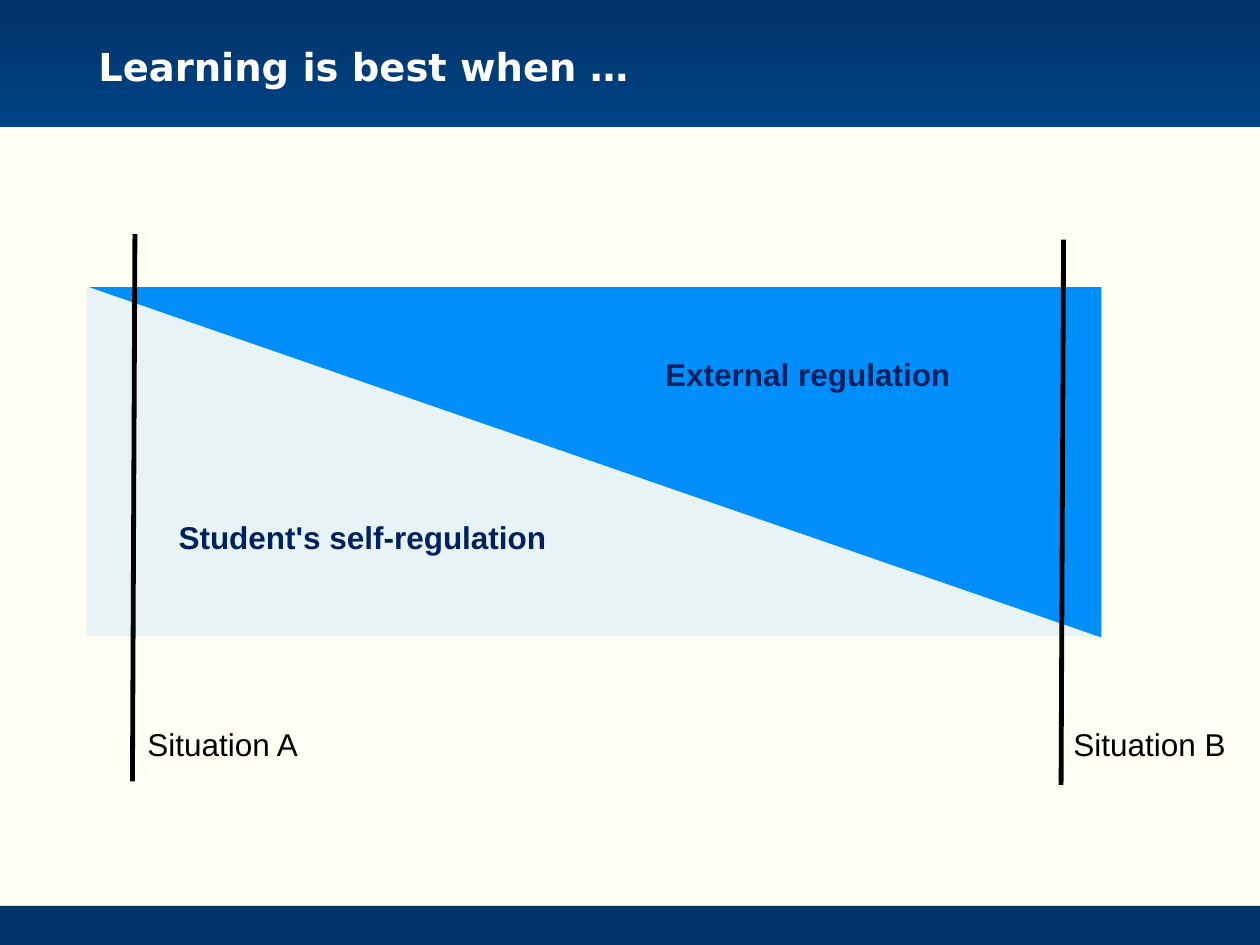
"""Build the slide on self-regulation and external regulation in learning."""
from dataclasses import dataclass

from lxml import etree
from pptx import Presentation
from pptx import util as u
from pptx.dml.color import RGBColor
from pptx.enum import shapes, text
from pptx.oxml import ns

NAVY, INK, WHITE, BLACK = "003366", "002060", "FFFFFF", "000000"


@dataclass
class Box:
    """A frame in centimetres."""
    left: float
    top: float
    width: float
    height: float

    def emu(self) -> tuple:
        """Return the frame as lengths."""
        return tuple(u.Cm(v) for v in (self.left, self.top, self.width, self.height))


@dataclass
class Block:
    """A filled shape without outline."""
    kind: shapes.MSO_SHAPE
    box: Box
    colors: tuple
    rotation: float = 0


@dataclass
class Label:
    """A short text on the diagram."""
    words: str
    box: Box
    color: str = BLACK
    bold: bool = False


@dataclass
class Marker:
    """A slightly slanted line that marks a situation."""
    x1: float
    y1: float
    x2: float
    y2: float


BLOCKS = [
    Block(shapes.MSO_SHAPE.RECTANGLE, Box(0, 18.26, 25.4, 0.79), (NAVY,)),
    Block(shapes.MSO_SHAPE.RECTANGLE, Box(0, 0, 25.4, 2.57), (NAVY, "004385")),
    Block(shapes.MSO_SHAPE.RIGHT_TRIANGLE, Box(1.75, 5.77, 20.4, 7.06), ("E7F3F4",)),
    Block(shapes.MSO_SHAPE.RIGHT_TRIANGLE, Box(1.8, 5.79, 20.4, 7.06), ("008FFA",), 180),
]
LABELS = [
    Label("Student's self-regulation", Box(3.35, 10.31, 8.61, 1.02), INK, True),
    Label("External regulation", Box(13.16, 7.04, 7.9, 1.02), INK, True),
    Label("Situation A", Box(2.72, 14.5, 5, 1.02)),
    Label("Situation B", Box(21.39, 14.5, 5, 1.02)),
]
MARKERS = [Marker(2.72, 4.72, 2.67, 15.75), Marker(21.44, 4.83, 21.39, 15.82)]


def rgb(value: str) -> RGBColor:
    """Turn a hex string into a colour."""
    return RGBColor.from_string(value)


def write(tf, words: str, *, size: float = 18, font: str = "Arial", color: str = BLACK,
          bold: bool = False, anchor=text.MSO_ANCHOR.TOP) -> None:
    """Write one left-aligned paragraph into a text frame."""
    tf.word_wrap = True
    tf.auto_size = text.MSO_AUTO_SIZE.NONE
    tf.vertical_anchor = anchor
    p = tf.paragraphs[0]
    p.alignment = text.PP_ALIGN.LEFT
    r = p.add_run()
    r.text = words
    r.font.size, r.font.name, r.font.bold = u.Pt(size), font, bold
    r.font.color.rgb = rgb(color)


def draw_block(s, block: Block) -> None:
    """Draw a filled shape, with a downward gradient if it has two colours."""
    sp = s.shapes.add_shape(block.kind, *block.box.emu())
    sp.shadow.inherit = False
    sp.rotation = block.rotation
    sp.line.fill.background()
    if len(block.colors) == 1:
        sp.fill.solid()
        sp.fill.fore_color.rgb = rgb(block.colors[0])
    else:
        sp.fill.gradient()
        sp.fill.gradient_angle = 270
        for position, (stop, color) in enumerate(zip(sp.fill.gradient_stops, block.colors)):
            stop.position = position
            stop.color.rgb = rgb(color)


def draw_label(s, label: Label) -> None:
    """Draw a label in a text box."""
    sp = s.shapes.add_textbox(*label.box.emu())
    write(sp.text_frame, label.words, color=label.color, bold=label.bold)


def draw_marker(s, marker: Marker) -> None:
    """Draw a situation line without shadow."""
    ends = (u.Cm(v) for v in (marker.x1, marker.y1, marker.x2, marker.y2))
    line = s.shapes.add_connector(shapes.MSO_CONNECTOR.STRAIGHT, *ends)
    line.line.color.rgb = rgb(BLACK)
    line.line.width = u.Pt(2.75)
    etree.SubElement(line.element.spPr, ns.qn("a:effectLst"))


def draw_title(s, words: str, box: Box) -> None:
    """Fill the title placeholder and bring it in front of the header bar."""
    sp = s.shapes.title
    sp.left, sp.top, sp.width, sp.height = box.emu()
    write(sp.text_frame, words, size=22, font="DejaVu Sans", color=WHITE, bold=True,
          anchor=text.MSO_ANCHOR.MIDDLE)
    sp.element.getparent().append(sp.element)


def main() -> None:
    """Build and save the slide."""
    prs = Presentation()
    prs.slide_width, prs.slide_height = u.Cm(25.4), u.Cm(19.05)
    s = prs.slides.add_slide(prs.slide_layouts[5])
    s.background.fill.solid()
    s.background.fill.fore_color.rgb = rgb("FFFEF3")
    for block in BLOCKS:
        draw_block(s, block)
    draw_title(s, "Learning is best when …", Box(1.73, 0.74, 20.85, 1.19))
    for marker in MARKERS:
        draw_marker(s, marker)
    for label in LABELS:
        draw_label(s, label)
    prs.save("out.pptx")


if __name__ == "__main__":
    main()
